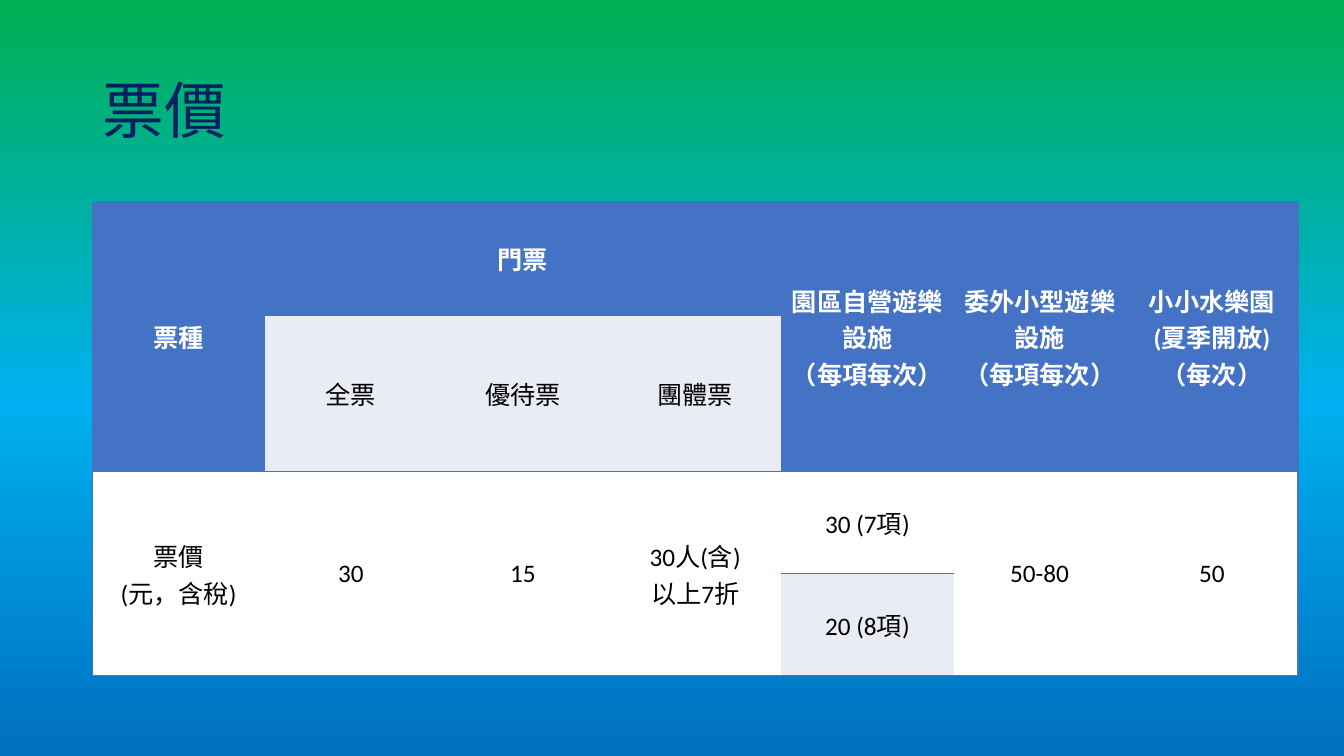
"""Build a slide with a table of park ticket prices."""
from copy import deepcopy

from lxml.etree import SubElement
from pptx import Presentation
from pptx.dml.color import RGBColor
from pptx.enum.text import MSO_ANCHOR, PP_ALIGN
from pptx.oxml.ns import qn
from pptx.util import Cm, Pt

COLORS = {
    "green": "00B050", "sky": "00B0F0", "ocean": "0070C0", "navy": "002060",
    "header": "4472C4", "band": "E9EBF5", "white": "FFFFFF", "black": "000000",
}
NO_GRID_STYLE = "{2D5ABB26-0587-4C30-8999-92F81FD0307C}"


def write(frame, text, size=18, font="Calibri", color="black", bold=False,
          align=PP_ALIGN.CENTER, spacing=None):
    para = frame.paragraphs[0]
    para.text = text.replace("\n", "\v")
    para.alignment = align
    para.line_spacing = spacing
    for span in para.runs:
        span.font.size = Pt(size)
        span.font.name = font
        span.font.bold = bold
        span.font.color.rgb = RGBColor.from_string(COLORS[color])


def add_border(cell, side):
    line = SubElement(cell._tc.get_or_add_tcPr(), qn(f"a:ln{side}"), w=str(Pt(1)))
    fill = SubElement(line, qn("a:solidFill"))
    SubElement(fill, qn("a:srgbClr"), val=COLORS["header"])


deck = Presentation()
deck.slide_width, deck.slide_height = Cm(33.87), Cm(19.05)
page = deck.slides.add_slide(deck.slide_layouts[5])

background = page.background.fill
background.gradient()
background.gradient_angle = 270
stop_list = next(page.element.iter(qn("a:gsLst")))
stop_list.insert(1, deepcopy(stop_list[0]))
for stop, position, name in zip(background.gradient_stops, (0, 0.53, 1),
                                ("green", "sky", "ocean")):
    stop.position = position
    stop.color.rgb = RGBColor.from_string(COLORS[name])

title = page.shapes.title
title.left, title.top, title.width, title.height = Cm(2.33), Cm(1.01), Cm(29.21), Cm(3.68)
title.text_frame.vertical_anchor = MSO_ANCHOR.MIDDLE
write(title.text_frame, "票價", size=44, font="Noto Sans CJK JP", color="navy",
      align=PP_ALIGN.LEFT, spacing=0.9)

row_heights = [2.87, 3.94, 2.57, 2.57]
column_count = 7
table_frame = page.shapes.add_table(len(row_heights), column_count, Cm(2.33), Cm(5.08),
                                    Cm(30.38), Cm(sum(row_heights)))
next(table_frame.element.iter(qn("a:tableStyleId"))).text = NO_GRID_STYLE
table = table_frame.table
for row, height in zip(table.rows, row_heights):
    row.height = Cm(height)
for column in table.columns:
    column.width = Cm(4.34)

table.cell(0, 1).merge(table.cell(0, 3))
for top, columns in ((0, (0, 4, 5, 6)), (2, (0, 1, 2, 3, 5, 6))):
    for column in columns:
        table.cell(top, column).merge(table.cell(top + 1, column))

ticket_rows = [
    ["票種", "門票", "", "", "園區自營遊樂設施\n（每項每次）",
     "委外小型遊樂設施\n（每項每次）", "小小水樂園\n(夏季開放)\n（每次）"],
    ["", "全票", "優待票", "團體票", "", "", ""],
    ["票價\n(元，含稅)", "30", "15", "30人(含)\n以上7折", "30 (7項)", "50-80", "50"],
    ["", "", "", "", "20 (8項)", "", ""],
]
row_fills = ["header", "band", "white", "band"]
for row, texts in enumerate(ticket_rows):
    is_header = row == 0
    for column, text in enumerate(texts):
        cell = table.cell(row, column)
        if cell.is_spanned:
            continue
        cell.vertical_anchor = MSO_ANCHOR.MIDDLE
        cell.margin_left = cell.margin_right = Cm(0.08)
        cell.margin_top = cell.margin_bottom = Cm(0.08)
        if column == 0:
            add_border(cell, "L")
        if column == column_count - 1:
            add_border(cell, "R")
        add_border(cell, "T")
        add_border(cell, "B")
        cell.fill.solid()
        cell.fill.fore_color.rgb = RGBColor.from_string(COLORS[row_fills[row]])
        write(cell.text_frame, text, color="white" if is_header else "black", bold=is_header)

deck.save("out.pptx")
